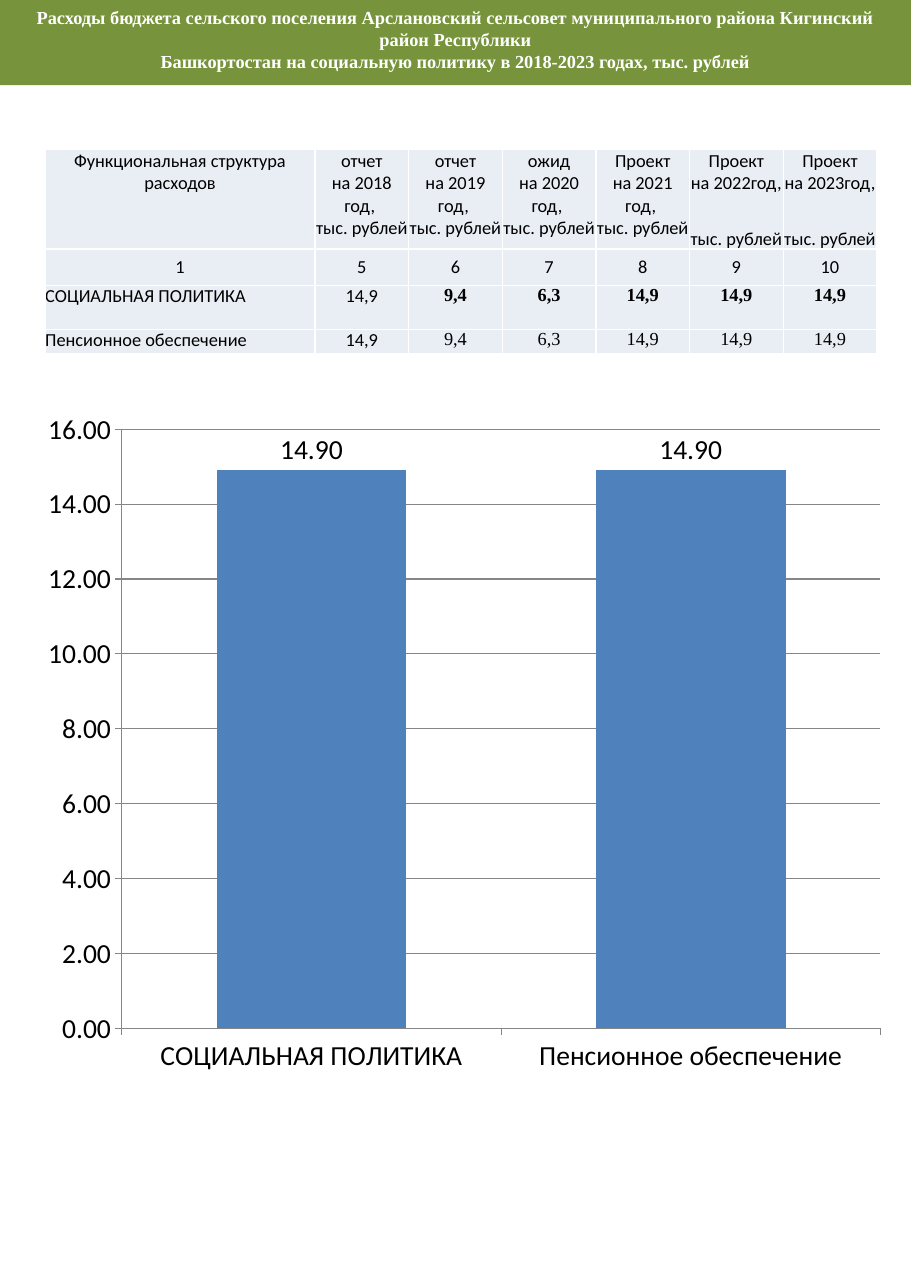
from lxml import etree
from pptx import Presentation
from pptx import util as u
from pptx.chart import data as chart_data
from pptx.dml.color import RGBColor
from pptx.enum import chart as ch
from pptx.enum import text as t
from pptx.oxml import ns

COLOURS = {"band": "77933C", "white": "FFFFFF", "black": "000000",
           "cell": "E9EDF4", "bar": "4F81BD", "axis": "868686"}
SANS, SERIF = "Calibri", "Times New Roman"


def colour(name):
    return RGBColor.from_string(COLOURS[name])


def inches(*lengths):
    return [u.Inches(length) for length in lengths]


class BudgetSlide:
    """Holds the text style and the current slide."""

    def __init__(self, presentation, size=12):
        self.slide = presentation.slides.add_slide(presentation.slide_layouts[5])
        self.size = size

    def style_font(self, font, name, shade="black", size=None, bold=False):
        font.name, font.bold = name, bold
        font.size = u.Pt(size or self.size)
        font.color.rgb = colour(shade)

    def add_text(self, paragraph, content, name, **style):
        for index, line in enumerate(content.split("\n")):
            if index:
                paragraph.add_line_break()
            run = paragraph.add_run()
            run.text = line
            self.style_font(run.font, name, **style)

    def title(self, lines, box):
        shape = self.slide.shapes.title
        shape.left, shape.top, shape.width, shape.height = inches(*box)
        shape.fill.solid()
        shape.fill.fore_color.rgb = colour("band")
        frame = shape.text_frame
        frame.word_wrap = True
        frame.auto_size = t.MSO_AUTO_SIZE.SHAPE_TO_FIT_TEXT
        frame.vertical_anchor = t.MSO_ANCHOR.MIDDLE
        for index, line in enumerate(lines):
            paragraph = frame.add_paragraph() if index else frame.paragraphs[0]
            paragraph.alignment = t.PP_ALIGN.CENTER
            paragraph.space_before = u.Pt(0)
            self.add_text(paragraph, line, SERIF, shade="white", bold=True)

    def cell_borders(self, cell):
        properties = cell._tc.get_or_add_tcPr()
        for side in ("lnL", "lnR", "lnT", "lnB"):
            line = etree.SubElement(properties, ns.qn(f"a:{side}"), w=str(u.Pt(1)))
            fill = etree.SubElement(line, ns.qn("a:solidFill"))
            etree.SubElement(fill, ns.qn("a:srgbClr"), val=COLOURS["white"])

    def table(self, rows, box, widths, heights):
        table = self.slide.shapes.add_table(
            len(rows), len(widths), *inches(*box)).table
        table.first_row = table.horz_banding = False
        for column, width in zip(table.columns, widths):
            column.width = u.Inches(width)
        for row, height in zip(table.rows, heights):
            row.height = u.Inches(height)
        for r, values in enumerate(rows):
            for c, value in enumerate(values):
                cell = table.cell(r, c)
                self.cell_borders(cell)
                cell.fill.solid()
                cell.fill.fore_color.rgb = colour("cell")
                cell.margin_left = cell.margin_right = 0
                cell.margin_top = cell.margin_bottom = 0
                if r == 1:
                    cell.vertical_anchor = t.MSO_ANCHOR.MIDDLE
                paragraph = cell.text_frame.paragraphs[0]
                is_label = r > 1 and c == 0
                paragraph.alignment = (t.PP_ALIGN.LEFT if is_label
                                       else t.PP_ALIGN.CENTER)
                is_serif = r > 1 and c > 1
                self.add_text(paragraph, value, SERIF if is_serif else SANS,
                              bold=is_serif and r == 2)

    def column_chart(self, categories, values, box, size=18):
        data = chart_data.CategoryChartData(number_format="#,##0.00")
        data.categories = categories
        data.add_series("Series 1", values)
        chart = self.slide.shapes.add_chart(
            ch.XL_CHART_TYPE.COLUMN_CLUSTERED, *inches(*box), data).chart
        chart.has_legend = chart.has_title = False
        self.style_font(chart.font, SANS, size=size)

        # Bars and their labels
        plot = chart.plots[0]
        plot.gap_width = 100
        plot.vary_by_categories = False
        bars = plot.series[0].format.fill
        bars.solid()
        bars.fore_color.rgb = colour("bar")
        plot.has_data_labels = True
        labels = plot.data_labels
        labels.show_value = True
        labels.number_format = "#,##0.00"
        labels.number_format_is_linked = False
        labels.position = ch.XL_LABEL_POSITION.OUTSIDE_END
        self.style_font(labels.font, SANS, size=size)

        # Axes and gridlines
        value_axis = chart.value_axis
        value_axis.has_major_gridlines = True
        value_axis.minimum_scale, value_axis.maximum_scale = 0, 16
        value_axis.major_unit = 2
        value_axis.tick_labels.number_format = "#,##0.00"
        value_axis.tick_labels.number_format_is_linked = False
        for axis in (chart.category_axis, value_axis):
            axis.major_tick_mark = ch.XL_TICK_MARK.OUTSIDE
            axis.minor_tick_mark = ch.XL_TICK_MARK.NONE
        for part in (chart.category_axis, value_axis, value_axis.major_gridlines):
            part.format.line.color.rgb = colour("axis")
            part.format.line.width = u.Pt(0.75)


def main():
    presentation = Presentation()
    presentation.slide_width, presentation.slide_height = inches(8.27, 11.69)
    budget = BudgetSlide(presentation)

    # Title band
    budget.title([
        "Расходы бюджета сельского поселения Арслановский сельсовет "
        "муниципального района Кигинский район Республики",
        "Башкортостан на социальную политику в 2018-2023 годах, тыс. рублей",
    ], (0, 0, 8.27, 0.71))

    # Column chart
    items = ["СОЦИАЛЬНАЯ ПОЛИТИКА", "Пенсионное обеспечение"]
    budget.column_chart(items, [14.9, 14.9], (0.28, 3.62, 7.87, 6.24))

    # Spending table
    periods = [("отчет", "2018 "), ("отчет", "2019 "), ("ожид", "2020 "),
               ("Проект", "2021 "), ("Проект", "2022"), ("Проект", "2023")]
    headings = [f"{status}\nна {year}год, \nтыс. рублей"
                for status, year in periods]
    amounts = ["14,9", "9,4", "6,3", "14,9", "14,9", "14,9"]
    rows = [["Функциональная структура расходов"] + headings,
            ["1"] + [str(number) for number in range(5, 11)]]
    rows += [[item] + amounts for item in items]
    budget.table(rows, (0.41, 1.36, 7.55, 1.8),
                 [2.45] + [0.85] * 6, [0.85, 0.33, 0.4, 0.22])

    presentation.save("out.pptx")


if __name__ == "__main__":
    main()
